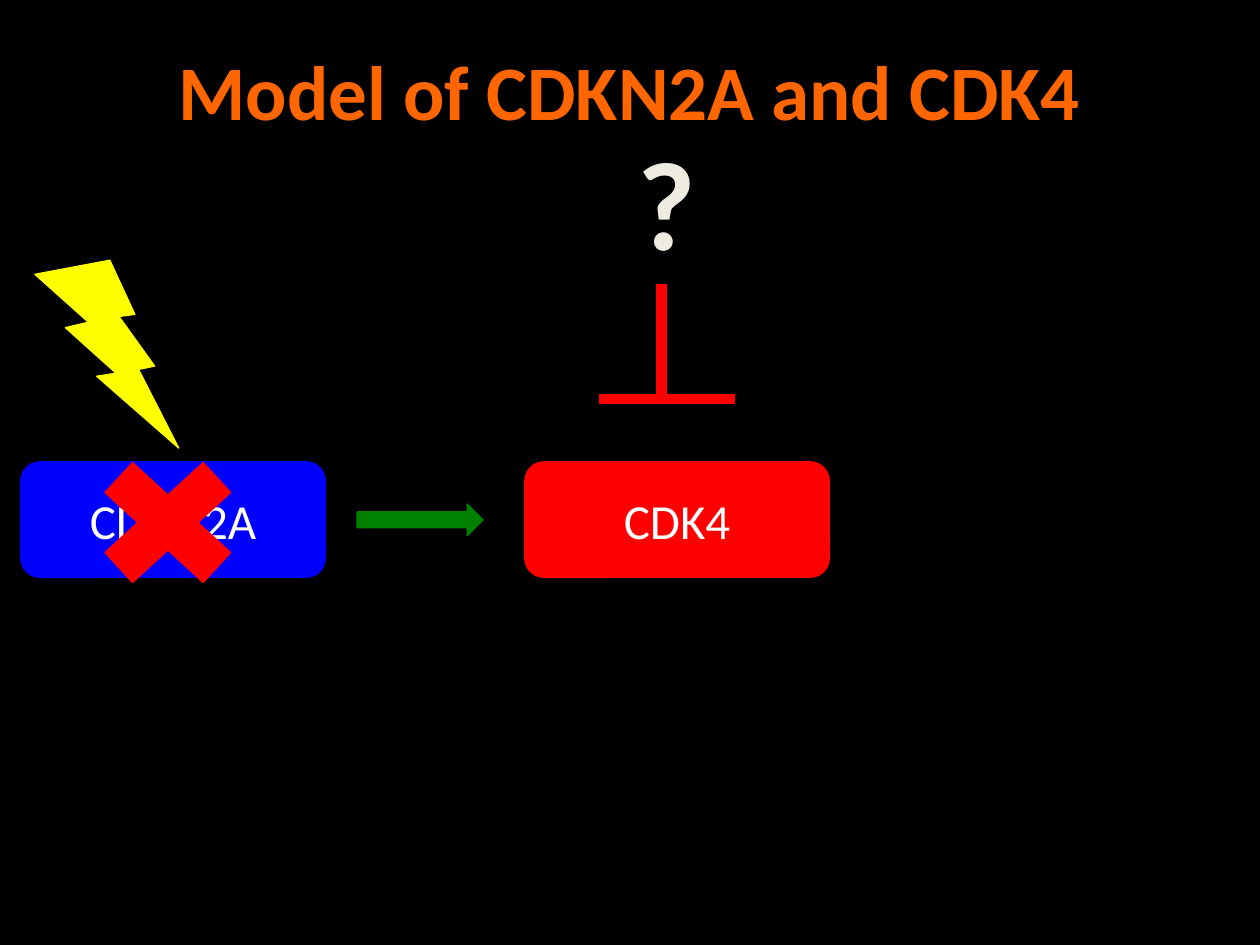
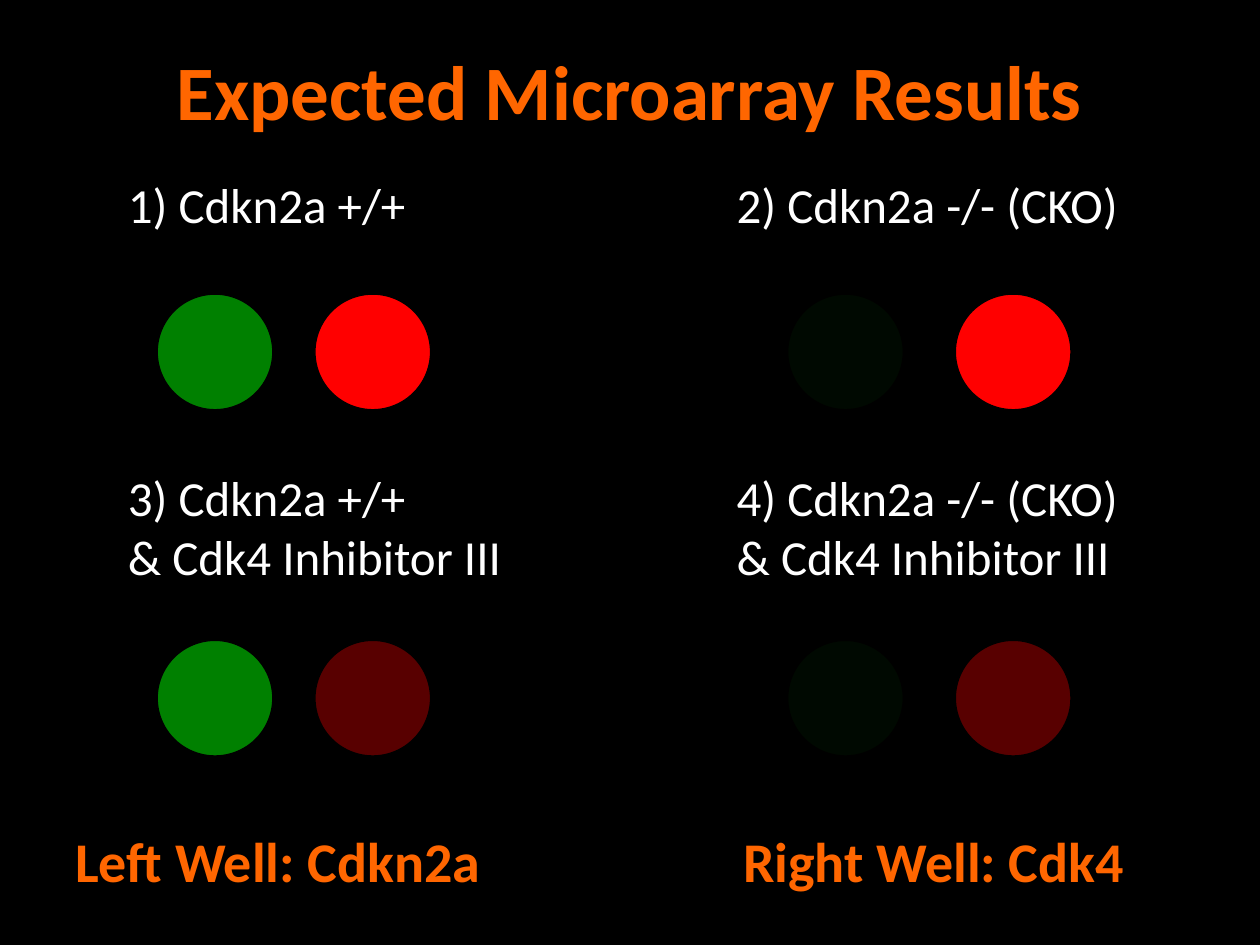
from dataclasses import dataclass

from lxml import etree
from pptx import Presentation
from pptx import util as u
from pptx.dml.color import RGBColor
from pptx.enum import shapes, text
from pptx.oxml.ns import qn

Cm = u.Cm
SHAPE = shapes.MSO_SHAPE
ALIGN = text.PP_ALIGN
ANCHOR = text.MSO_ANCHOR


@dataclass(frozen=True)
class Theme:
    font: str = "Calibri"
    back: str = "000000"
    accent: str = "FF6600"
    body: str = "FFFFFF"
    pale: str = "EEECE1"
    blue: str = "0000FF"
    red: str = "FF0000"
    dim_red: str = "580000"
    green: str = "008000"
    dim_green: str = "000901"
    yellow: str = "FFFF00"
    title_size: int = 44
    body_size: int = 28
    legend_size: int = 32
    symbol_size: int = 72
    outline: float = 0.75
    bar: float = 6


T = Theme()


def rgb(value):
    return RGBColor.from_string(value)


def write(tf, content, size=T.body_size, color=T.body, bold=False,
          align=ALIGN.LEFT, anchor=ANCHOR.TOP):
    """Fill a text frame, one paragraph for each line of content."""
    tf.word_wrap = True
    tf.vertical_anchor = anchor
    tf.text = content
    for p in tf.paragraphs:
        p.alignment = align
        for r in p.runs:
            r.font.name, r.font.size, r.font.bold = T.font, u.Pt(size), bold
            r.font.color.rgb = rgb(color)


def add_title_slide(prs, title, left, width):
    """Add a title-only slide whose title spans the given width."""
    s = prs.slides.add_slide(prs.slide_layouts[5])
    sp = s.shapes.title
    sp.left, sp.top, sp.width, sp.height = Cm(left), Cm(0.76), Cm(width), Cm(3.18)
    write(sp.text_frame, title, size=T.title_size, color=T.accent, bold=True,
          align=ALIGN.CENTER)
    return s


def add_text(s, content, left, top, width, height, **fmt):
    sp = s.shapes.add_textbox(Cm(left), Cm(top), Cm(width), Cm(height))
    write(sp.text_frame, content, **fmt)
    sp.text_frame.auto_size = text.MSO_AUTO_SIZE.SHAPE_TO_FIT_TEXT
    return sp


def add_shape(s, kind, left, top, width, height, fill, line=None):
    """Add a flat shape, outlined in its fill colour unless line is given."""
    sp = s.shapes.add_shape(kind, Cm(left), Cm(top), Cm(width), Cm(height))
    sp.shadow.inherit = False
    sp.fill.solid()
    sp.fill.fore_color.rgb = rgb(fill)
    sp.line.color.rgb = rgb(line or fill)
    sp.line.width = u.Pt(T.outline)
    return sp


def add_gene(s, name, left, fill):
    sp = add_shape(s, SHAPE.ROUNDED_RECTANGLE, left, 9.31, 6.14, 2.33, fill)
    write(sp.text_frame, name, align=ALIGN.CENTER, anchor=ANCHOR.MIDDLE)


def add_bar(s, x1, y1, x2, y2):
    line = s.shapes.add_connector(shapes.MSO_CONNECTOR.STRAIGHT,
                                  Cm(x1), Cm(y1), Cm(x2), Cm(y2))
    line.line.color.rgb = rgb(T.red)
    line.line.width = u.Pt(T.bar)
    etree.SubElement(line._element.spPr, qn("a:effectLst"))


def set_tabs(p, *stops):
    tabs = etree.SubElement(p._p.get_or_add_pPr(), qn("a:tabLst"))
    for stop in stops:
        etree.SubElement(tabs, qn("a:tab"), pos=str(Cm(stop)), algn="l")


def add_panel(s, lines, left, top, width, wells_top, wells):
    """Add a condition label above its wells, given as (left, colour) pairs."""
    add_text(s, "\n".join(lines), left, top, width, 0.26 + 1.19 * len(lines))
    for well_left, color in wells:
        add_shape(s, SHAPE.OVAL, well_left, wells_top, 2.33, 2.33, color, line=T.back)


def build_model(prs):
    s = add_title_slide(prs, "Model of CDKN2A and CDK4", 1.27, 22.86)
    add_gene(s, "CDKN2A", 0.42, T.blue)
    add_gene(s, "CDK4", 10.58, T.red)
    bolt = add_shape(s, SHAPE.LIGHTNING_BOLT, 0.42, 5.29, 3.6, 3.39, T.yellow)
    bolt.rotation = 12.7
    add_shape(s, SHAPE.RIGHT_ARROW, 7.2, 10.16, 2.54, 0.64, T.green)
    add_shape(s, SHAPE.MATH_MULTIPLY, 1.48, 8.79, 3.81, 3.49, T.red)
    add_text(s, "?", 12.07, 2.39, 2.75, 3.33, size=T.symbol_size, color=T.pale,
             bold=True, align=ALIGN.CENTER)
    add_bar(s, 13.34, 5.72, 13.34, 8.04)
    add_bar(s, 12.07, 8.04, 14.82, 8.04)


def build_results(prs):
    s = add_title_slide(prs, "Expected Microarray Results", 0, 25.4)
    # Genotype, label left, Cdkn2a well left and colour, Cdk4 well left
    genotypes = [("Cdkn2a +/+", 2.33, 3.17, T.green, 6.35),
                 ("Cdkn2a -/- (CKO)", 14.6, 15.88, T.dim_green, 19.26)]
    # Extra label lines, label top, wells top, Cdk4 colour, label widths
    treatments = [([], 3.39, 5.93, T.red, (6.35, 8.69)),
                  (["& Cdk4 Inhibitor III"], 9.31, 12.91, T.dim_red, (8.26, 9.73))]
    number = 0
    for extra, top, wells_top, cdk4_color, widths in treatments:
        for (name, left, x1, cdkn2a_color, x2), width in zip(genotypes, widths):
            number += 1
            add_panel(s, [f"{number}) {name}", *extra], left, top, width, wells_top,
                      [(x1, cdkn2a_color), (x2, cdk4_color)])
    legend = add_text(s, "\tLeft Well: Cdkn2a\tRight Well: Cdk4", 0, 16.54, 25.4, 1.62,
                      size=T.legend_size, color=T.accent, bold=True)
    set_tabs(legend.text_frame.paragraphs[0], 1.27, 14.73)


def main():
    prs = Presentation()
    prs.slide_width, prs.slide_height = Cm(25.4), Cm(19.05)
    fill = prs.slide_master.background.fill
    fill.solid()
    fill.fore_color.rgb = rgb(T.back)
    build_model(prs)
    build_results(prs)
    prs.save("out.pptx")


if __name__ == "__main__":
    main()
